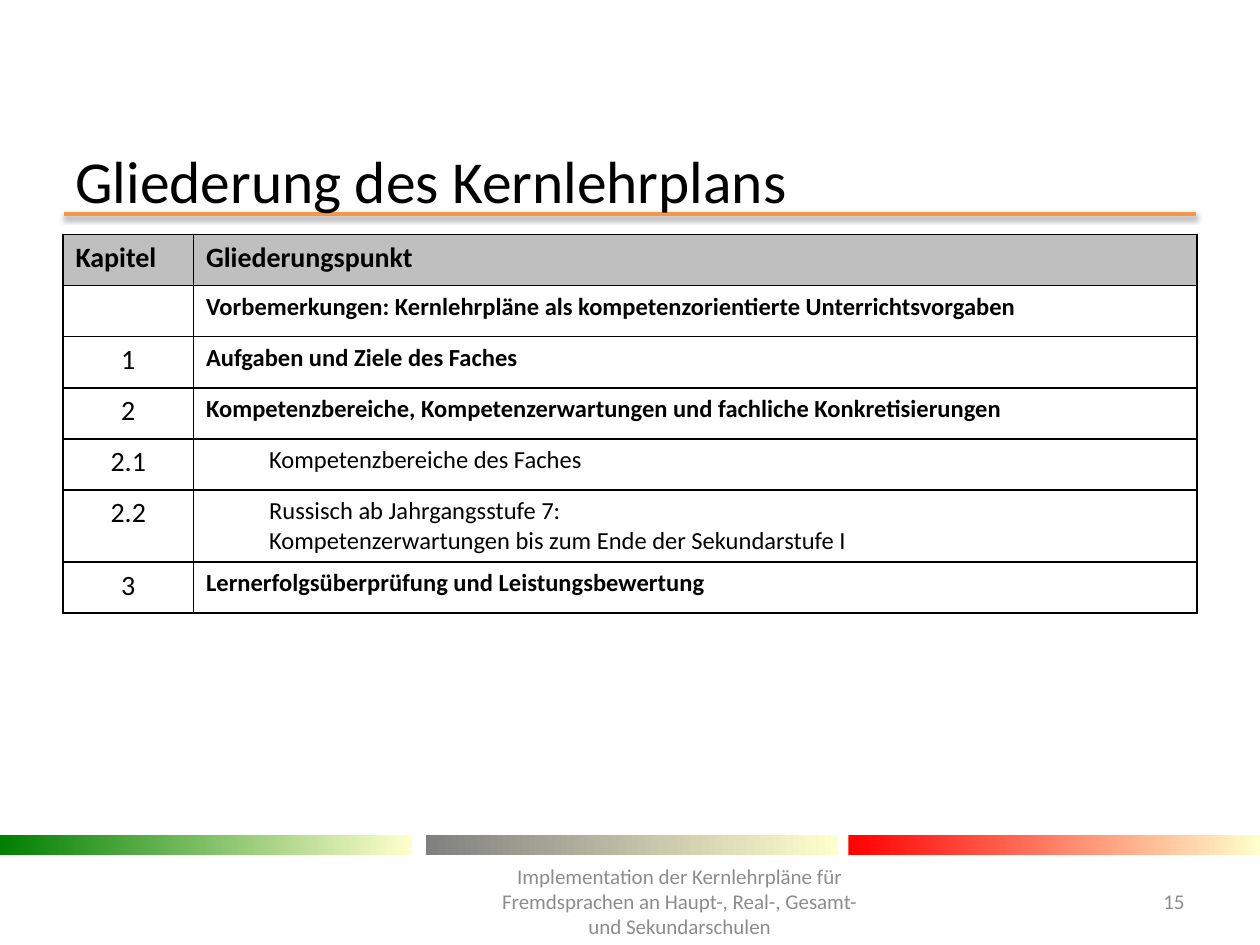
import pptx
import pptx.dml.color
import pptx.enum.shapes
import pptx.enum.text
import pptx.oxml
import pptx.util
from pptx.util import Pt

ALIGN = pptx.enum.text.PP_ALIGN
NS = 'xmlns:a="http://schemas.openxmlformats.org/drawingml/2006/main"'


def color(value):
    return pptx.dml.color.RGBColor.from_string(value)


def write(frame, text, size, ink="000000", bold=False, align=ALIGN.LEFT, indent=0):
    frame.word_wrap = True
    paragraph = frame.paragraphs[0]
    paragraph.text = text
    paragraph.alignment = align
    if indent:
        properties = paragraph._p.get_or_add_pPr()
        properties.set("marL", str(Pt(indent)))
        properties.set("indent", "0")
    paragraph.font.name = "Calibri"
    paragraph.font.size = Pt(size)
    paragraph.font.bold = bold
    paragraph.font.color.rgb = color(ink)


presentation = pptx.Presentation()
presentation.slide_width = Pt(720)
presentation.slide_height = Pt(540)
slide = presentation.slides.add_slide(presentation.slide_layouts[6])
shapes = slide.shapes

title_rule = shapes.add_connector(
    pptx.enum.shapes.MSO_CONNECTOR.STRAIGHT, Pt(36.6), Pt(122.4), Pt(683.4), Pt(122.4))
title_rule.line.color.rgb = color("F79646")
title_rule.line.width = Pt(2)
title_rule._element.spPr.append(pptx.oxml.parse_xml(
    f'<a:effectLst {NS}><a:outerShdw blurRad="{Pt(3.1)}" dist="{Pt(1.6)}" dir="5400000" '
    'rotWithShape="0"><a:srgbClr val="000000"><a:alpha val="38000"/></a:srgbClr>'
    '</a:outerShdw></a:effectLst>'))

for left, start in [(0, "008000"), (243.4, "808080"), (484.8, "FF0000")]:
    band = shapes.add_shape(
        pptx.enum.shapes.MSO_SHAPE.RECTANGLE, Pt(left), Pt(477.2), Pt(235.2), Pt(11.5))
    band.shadow.inherit = False
    band.line.fill.background()
    band.fill.gradient()
    band.fill.gradient_angle = 0
    for stop, shade, position in zip(band.fill.gradient_stops, (start, "FFFFCC"), (0, 1)):
        stop.color.rgb = color(shade)
        stop.position = position

captions = [
    ("Gliederung des Kernlehrplans", (36, 88.6, 648, 28), 34, "000000", ALIGN.LEFT),
    ("15", (638, 500.5, 46, 28.8), 12, "8C8C8C", ALIGN.RIGHT),
    ("Implementation der Kernlehrpläne für Fremdsprachen an Haupt-, Real-, Gesamt- "
     "und Sekundarschulen", (275, 500.5, 226.8, 28.8), 12, "8C8C8C", ALIGN.CENTER),
]
for text, bounds, size, ink, align in captions:
    caption = shapes.add_textbox(*map(Pt, bounds))
    caption.text_frame.vertical_anchor = pptx.enum.text.MSO_ANCHOR.MIDDLE
    write(caption.text_frame, text, size, ink, align=align)

chapters = [
    ("Kapitel", "Gliederungspunkt"),
    ("", "Vorbemerkungen: Kernlehrpläne als kompetenzorientierte Unterrichtsvorgaben"),
    ("1", "Aufgaben und Ziele des Faches"),
    ("2", "Kompetenzbereiche, Kompetenzerwartungen und fachliche Konkretisierungen"),
    ("2.1", "Kompetenzbereiche des Faches"),
    ("2.2", "Russisch ab Jahrgangsstufe 7:\nKompetenzerwartungen bis zum Ende der Sekundarstufe I"),
    ("3", "Lernerfolgsüberprüfung und Leistungsbewertung"),
]
outline = shapes.add_table(len(chapters), 2, Pt(36), Pt(134), Pt(648), Pt(216)).table
outline.first_row = False
outline.horz_banding = False
outline.columns[0].width = Pt(74.6)
outline.columns[1].width = Pt(573.4)

for row, (number, heading) in enumerate(chapters):
    outline.rows[row].height = Pt(41.2 if "\n" in heading else 29.2)
    header = row == 0
    section = "." in number
    for column, text in enumerate((number, heading)):
        cell = outline.cell(row, column)
        borders = cell._tc.get_or_add_tcPr()
        for side in ("lnL", "lnR", "lnT", "lnB"):
            borders.append(pptx.oxml.parse_xml(
                f'<a:{side} {NS} w="{Pt(1)}"><a:solidFill><a:srgbClr val="000000"/>'
                f'</a:solidFill></a:{side}>'))
        cell.fill.solid()
        cell.fill.fore_color.rgb = color("BFBFBF" if header else "FFFFFF")
        write(cell.text_frame, text,
              size=16 if header or column == 0 else 14,
              bold=header or (column == 1 and not section),
              align=ALIGN.CENTER if column == 0 and not header else ALIGN.LEFT,
              indent=36 if section and column == 1 else 0)

presentation.save("out.pptx")
